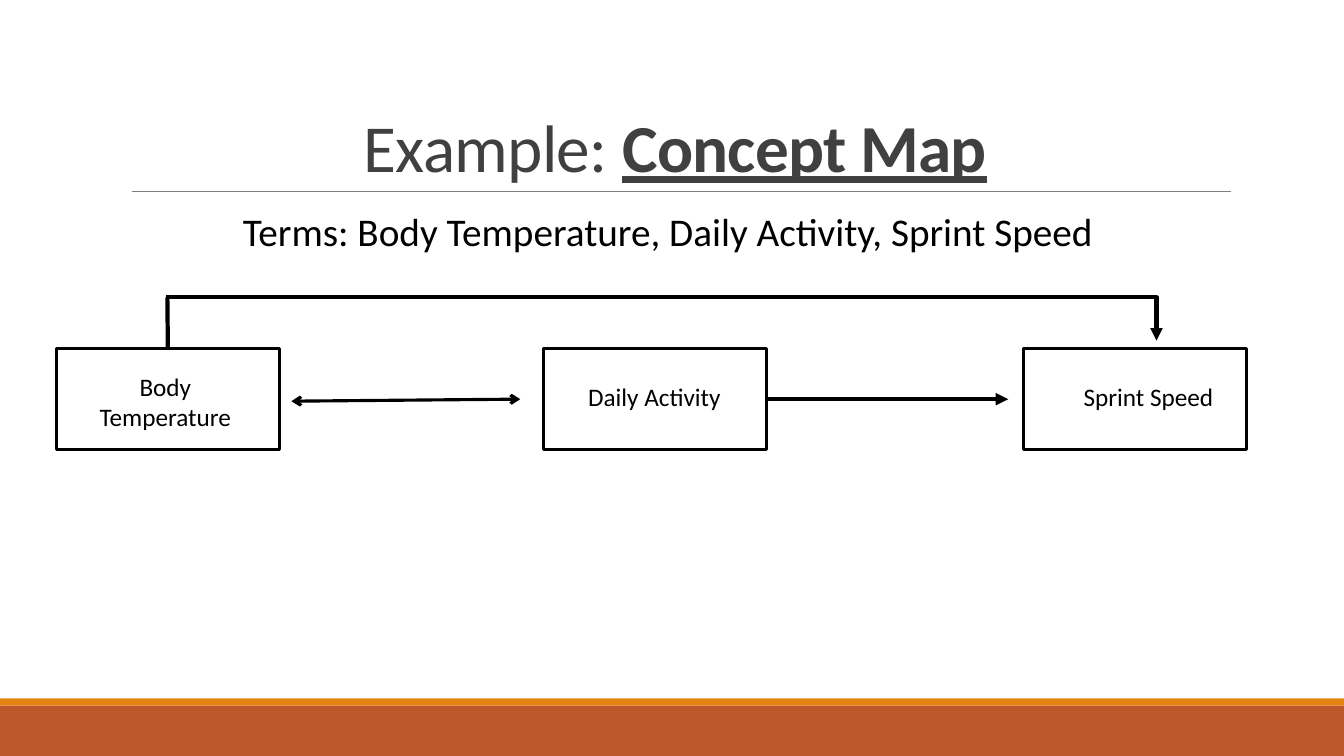
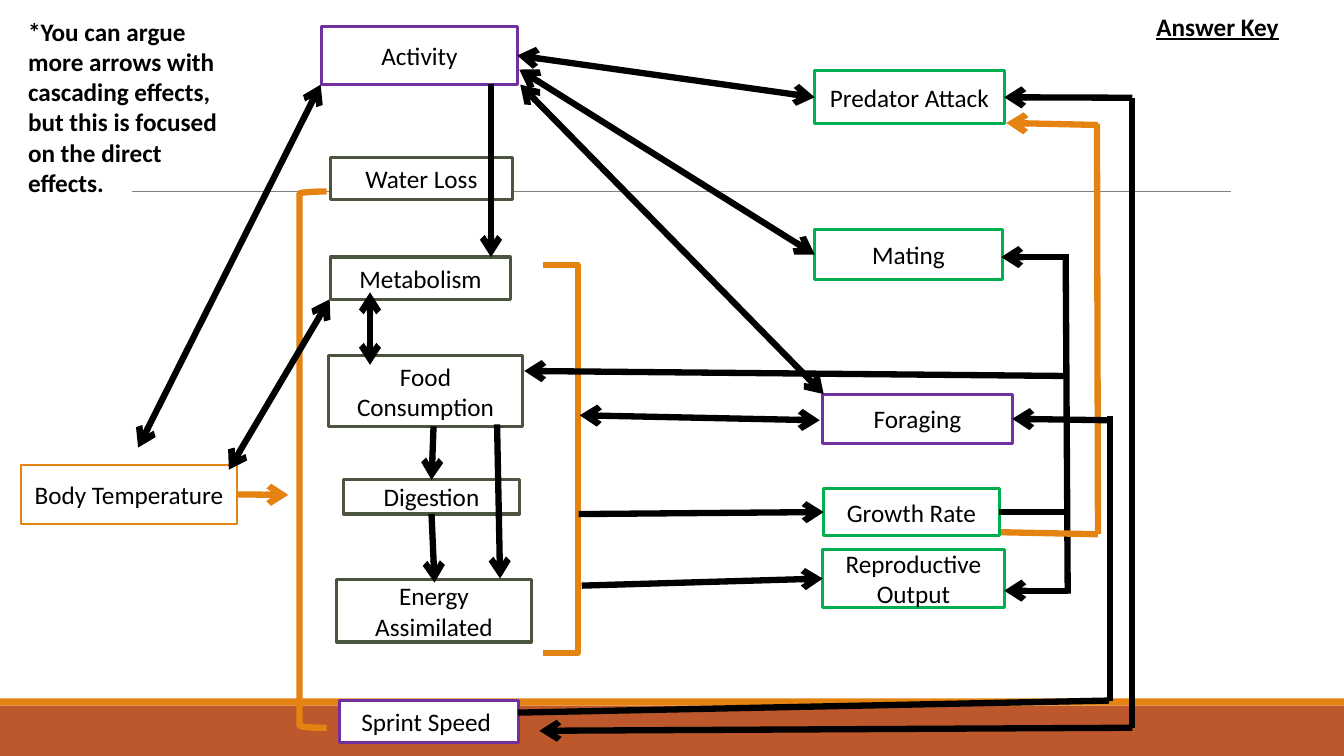
from dataclasses import dataclass
from typing import NamedTuple

from lxml import etree
from pptx import Presentation
from pptx.dml.color import RGBColor
from pptx.enum.shapes import MSO_CONNECTOR, MSO_SHAPE
from pptx.enum.text import MSO_ANCHOR, MSO_AUTO_SIZE, PP_ALIGN
from pptx.oxml.ns import qn
from pptx.util import Emu, Pt

RECTANGLE = MSO_SHAPE.RECTANGLE
LEFT_BRACKET = MSO_SHAPE.LEFT_BRACKET
RIGHT_BRACKET = MSO_SHAPE.RIGHT_BRACKET
STRAIGHT = MSO_CONNECTOR.STRAIGHT
ELBOW = MSO_CONNECTOR.ELBOW
BOTTOM_ANCHOR = MSO_ANCHOR.BOTTOM
MIDDLE_ANCHOR = MSO_ANCHOR.MIDDLE
FIT_SHAPE = MSO_AUTO_SIZE.SHAPE_TO_FIT_TEXT
NO_FIT = MSO_AUTO_SIZE.NONE
CENTER = PP_ALIGN.CENTER

WHITE = RGBColor(0xFF, 0xFF, 0xFF)
BLACK = RGBColor(0x00, 0x00, 0x00)
DARK_GRAY = RGBColor(0x40, 0x40, 0x40)
GRAY = RGBColor(0x80, 0x80, 0x80)
RUST = RGBColor(0xBD, 0x58, 0x2C)
ORANGE = RGBColor(0xE4, 0x83, 0x12)
OLIVE = RGBColor(0x4A, 0x54, 0x3E)
PURPLE = RGBColor(0x70, 0x30, 0xA0)
GREEN = RGBColor(0x00, 0xB0, 0x50)

FONT = "Calibri"
EMU_PER_PX = 9144
TOP, LEFT, BOTTOM, RIGHT = range(4)


class Point(NamedTuple):
    x: int
    y: int


class Joint(NamedTuple):
    box: str
    side: int


class Area(NamedTuple):
    left: int
    top: int
    width: int
    height: int


class Margins(NamedTuple):
    left: int = 10
    top: int = 5
    right: int = 10
    bottom: int = 5


class TextRun(NamedTuple):
    text: str
    size: int = 18
    color: RGBColor = BLACK
    bold: bool = False
    underline: bool = False
    spacing: int = 0


@dataclass(frozen=True)
class Box:
    text: str
    area: Area
    color: RGBColor
    width: float = 2.25
    margins: Margins = Margins()


@dataclass(frozen=True)
class Link:
    start: Point | Joint
    end: Point | Joint
    head: str = ""
    tail: str = ""
    color: RGBColor = BLACK
    width: float = 4.5
    kind: int = STRAIGHT


@dataclass(frozen=True)
class Bracket:
    kind: int
    area: Area
    roundness: float


def one_way(start: Point | Joint, end: Point | Joint, color: RGBColor = BLACK) -> Link:
    return Link(start, end, tail="arrow", color=color)


def two_way(start: Point | Joint, end: Point | Joint, width: float = 4.5) -> Link:
    return Link(start, end, "arrow", "arrow", width=width)


BANDS = [(Area(0, 700, 1333, 50), RUST), (Area(0, 693, 1333, 7), ORANGE)]
RULE = Link(Point(131, 190), Point(1221, 190), color=GRAY, width=0.5)

EXAMPLE_BOXES = [
    Box("Body Temperature", Area(56, 346, 221, 100), BLACK, margins=Margins(21, 10, 26, 5)),
    Box("Daily Activity", Area(539, 346, 221, 100), BLACK, margins=Margins(23, 5, 24, 11)),
    Box("Sprint Speed", Area(1015, 346, 221, 100), BLACK, margins=Margins(37, 5, 10, 11)),
]
EXAMPLE_LINKS = [
    two_way(Point(289, 398), Point(516, 396), 2.25),
    Link(Joint("Daily Activity", RIGHT), Point(1000, 396), tail="triangle", width=3),
    Link(Point(165, 295), Point(1147, 338), tail="triangle", width=3, kind=ELBOW),
    Link(Point(166, 295), Joint("Body Temperature", TOP), width=3),
]

ANSWER_BOXES = [
    Box("Body Temperature", Area(21, 461, 214, 59), ORANGE, 1.25),
    Box("Activity", Area(319, 26, 194, 58), PURPLE),
    Box("Water Loss", Area(328, 156, 180, 42), OLIVE),
    Box("Metabolism", Area(328, 255, 178, 42), OLIVE),
    Box("Food Consumption", Area(326, 353, 192, 70), OLIVE),
    Box("Digestion", Area(341, 476, 174, 34), OLIVE),
    Box("Energy Assimilated", Area(334, 575, 193, 62), OLIVE),
    Box("Sprint Speed ", Area(337, 695, 177, 42), PURPLE),
    Box("Predator Attack", Area(808, 70, 188, 53), GREEN),
    Box("Mating", Area(808, 228, 186, 49), GREEN),
    Box("Foraging", Area(816, 391, 188, 49), PURPLE),
    Box("Growth Rate", Area(817, 485, 174, 46), GREEN),
    Box("Reproductive Output", Area(816, 545, 180, 58), GREEN),
]
BRACKETS = [
    Bracket(LEFT_BRACKET, Area(297, 190, 27, 532), 0.08),
    Bracket(RIGHT_BRACKET, Area(539, 263, 34, 385), 0),
]
ANSWER_LINKS = [
    one_way(Joint("Body Temperature", RIGHT), Point(286, 491), ORANGE),
    two_way(Point(137, 444), Point(318, 84)),
    two_way(Point(227, 466), Point(327, 297)),
    two_way(Joint("Activity", RIGHT), Joint("Predator Attack", LEFT)),
    two_way(Point(515, 69), Joint("Mating", LEFT)),
    two_way(Point(516, 84), Point(817, 391)),
    one_way(Point(487, 83), Point(487, 255)),
    two_way(Point(367, 362), Point(367, 290)),
    one_way(Point(430, 423), Joint("Digestion", TOP)),
    one_way(Joint("Digestion", BOTTOM), Point(431, 578)),
    one_way(Point(493, 421), Point(496, 574)),
    two_way(Point(575, 412), Point(813, 417)),
    one_way(Point(574, 510), Joint("Growth Rate", LEFT)),
    one_way(Point(577, 581), Joint("Reproductive Output", LEFT)),
    Link(Joint("Growth Rate", RIGHT), Point(1061, 508)),
    Link(Point(1059, 589), Point(1057, 255)),
    one_way(Point(1060, 255), Point(993, 255)),
    one_way(Point(1057, 373), Point(520, 368)),
    one_way(Point(1059, 586), Point(996, 586)),
    Link(Point(993, 528), Point(1089, 530), color=ORANGE),
    Link(Point(1089, 530), Point(1088, 123), color=ORANGE),
    one_way(Point(1089, 124), Point(998, 122), ORANGE),
    one_way(Point(1123, 722), Point(535, 725)),
    Link(Point(1123, 722), Point(1123, 97)),
    one_way(Point(1123, 97), Joint("Predator Attack", RIGHT)),
    Link(Point(514, 707), Point(1100, 695)),
    Link(Point(1101, 413), Point(1101, 695)),
    one_way(Point(1103, 417), Joint("Foraging", RIGHT)),
]


def px(length: int) -> Emu:
    return Emu(length * EMU_PER_PX)


def to_emu(values: tuple) -> list[Emu]:
    return [px(value) for value in values]


def add_runs(paragraph, runs: list[TextRun]) -> None:
    for item in runs:
        run = paragraph.add_run()
        run.text = item.text
        font = run.font
        font.name = FONT
        font.size = Pt(item.size)
        font.color.rgb = item.color
        if item.bold:
            font.bold = True
        if item.underline:
            font.underline = True
        if item.spacing:
            run.font._element.set("spc", str(item.spacing))


def add_text(slide, area: Area, run: TextRun, wrap: bool) -> None:
    frame = slide.shapes.add_textbox(*to_emu(area)).text_frame
    frame.word_wrap = wrap
    frame.auto_size = FIT_SHAPE
    add_runs(frame.paragraphs[0], [run])


def add_box(slide, box: Box):
    shape = slide.shapes.add_shape(RECTANGLE, *to_emu(box.area))
    shape.shadow.inherit = False
    shape.fill.solid()
    shape.fill.fore_color.rgb = WHITE
    shape.line.color.rgb = box.color
    shape.line.width = Pt(box.width)
    frame = shape.text_frame
    frame.word_wrap = True
    frame.vertical_anchor = MIDDLE_ANCHOR
    (frame.margin_left, frame.margin_top,
     frame.margin_right, frame.margin_bottom) = to_emu(box.margins)
    paragraph = frame.paragraphs[0]
    paragraph.alignment = CENTER
    add_runs(paragraph, [TextRun(box.text)])
    return shape


def add_band(slide, area: Area, color: RGBColor):
    shape = slide.shapes.add_shape(RECTANGLE, *to_emu(area))
    shape.shadow.inherit = False
    shape.fill.solid()
    shape.fill.fore_color.rgb = color
    shape.line.fill.background()
    return shape


def add_bracket(slide, bracket: Bracket) -> None:
    shape = slide.shapes.add_shape(bracket.kind, *to_emu(bracket.area))
    shape.shadow.inherit = False
    shape.adjustments[0] = bracket.roundness
    shape.fill.background()
    shape.line.color.rgb = ORANGE
    shape.line.width = Pt(4.5)


def locate(end: Point | Joint, shapes: dict) -> tuple[int, int]:
    if isinstance(end, Point):
        return px(end.x), px(end.y)
    shape = shapes[end.box]
    across, down = {TOP: (1, 0), LEFT: (0, 1), BOTTOM: (1, 2), RIGHT: (2, 1)}[end.side]
    return shape.left + shape.width * across // 2, shape.top + shape.height * down // 2


def add_link(slide, link: Link, shapes: dict):
    connector = slide.shapes.add_connector(
        link.kind, *locate(link.start, shapes), *locate(link.end, shapes))
    if isinstance(link.start, Joint):
        connector.begin_connect(shapes[link.start.box], link.start.side)
    if isinstance(link.end, Joint):
        connector.end_connect(shapes[link.end.box], link.end.side)
    connector.line.color.rgb = link.color
    connector.line.width = Pt(link.width)
    properties = connector.element.spPr
    outline = properties.find(qn("a:ln"))
    for tag, arrowhead in (("a:headEnd", link.head), ("a:tailEnd", link.tail)):
        if arrowhead:
            etree.SubElement(outline, qn(tag), type=arrowhead)
    if link.kind == ELBOW:
        guides = properties.find(qn("a:prstGeom")).find(qn("a:avLst"))
        etree.SubElement(guides, qn("a:gd"), name="adj1", fmla="val 100000")
    etree.SubElement(properties, qn("a:effectLst"))
    return connector


def add_diagram(slide, boxes: list[Box], links: list[Link]) -> None:
    shapes = {box.text: add_box(slide, box) for box in boxes}
    for link in links:
        add_link(slide, link, shapes)


def decorate_master(presentation, slide) -> None:
    decorations = [add_band(slide, area, color) for area, color in BANDS]
    decorations.append(add_link(slide, RULE, {}))
    tree = presentation.slide_master.shapes.element
    for index, shape in enumerate(decorations):
        shape.element.xpath(".//p:cNvPr")[0].set("id", str(100 + index))
        tree.insert(2 + index, shape.element)


def set_title(slide, runs: list[TextRun]) -> None:
    title = slide.shapes.title
    title.left, title.top, title.width, title.height = to_emu(Area(120, 31, 1100, 159))
    frame = title.text_frame
    frame.auto_size = NO_FIT
    frame.vertical_anchor = BOTTOM_ANCHOR
    paragraph = frame.paragraphs[0]
    paragraph.alignment = CENTER
    paragraph.line_spacing = 0.85
    add_runs(paragraph, runs)


def main() -> None:
    presentation = Presentation()
    presentation.slide_width, presentation.slide_height = px(1333), px(750)
    example = presentation.slides.add_slide(presentation.slide_layouts[5])
    decorate_master(presentation, example)
    set_title(example, [TextRun("Example: ", 48, DARK_GRAY, spacing=-50),
                        TextRun("Concept Map", 48, DARK_GRAY, True, True, -50)])
    add_text(example, Area(231, 201, 872, 57),
             TextRun("Terms: Body Temperature, Daily Activity, Sprint Speed", 28), False)
    add_diagram(example, EXAMPLE_BOXES, EXAMPLE_LINKS)

    answer = presentation.slides.add_slide(presentation.slide_layouts[6])
    for bracket in BRACKETS:
        add_bracket(answer, bracket)
    add_diagram(answer, ANSWER_BOXES, ANSWER_LINKS)
    add_text(answer, Area(18, 11, 214, 192), TextRun(
        "*You can argue more arrows with cascading effects, but this is focused "
        "on the direct effects.", bold=True), True)
    add_text(answer, Area(1137, 6, 142, 40),
             TextRun("Answer Key", bold=True, underline=True), False)
    presentation.save("out.pptx")


if __name__ == "__main__":
    main()
